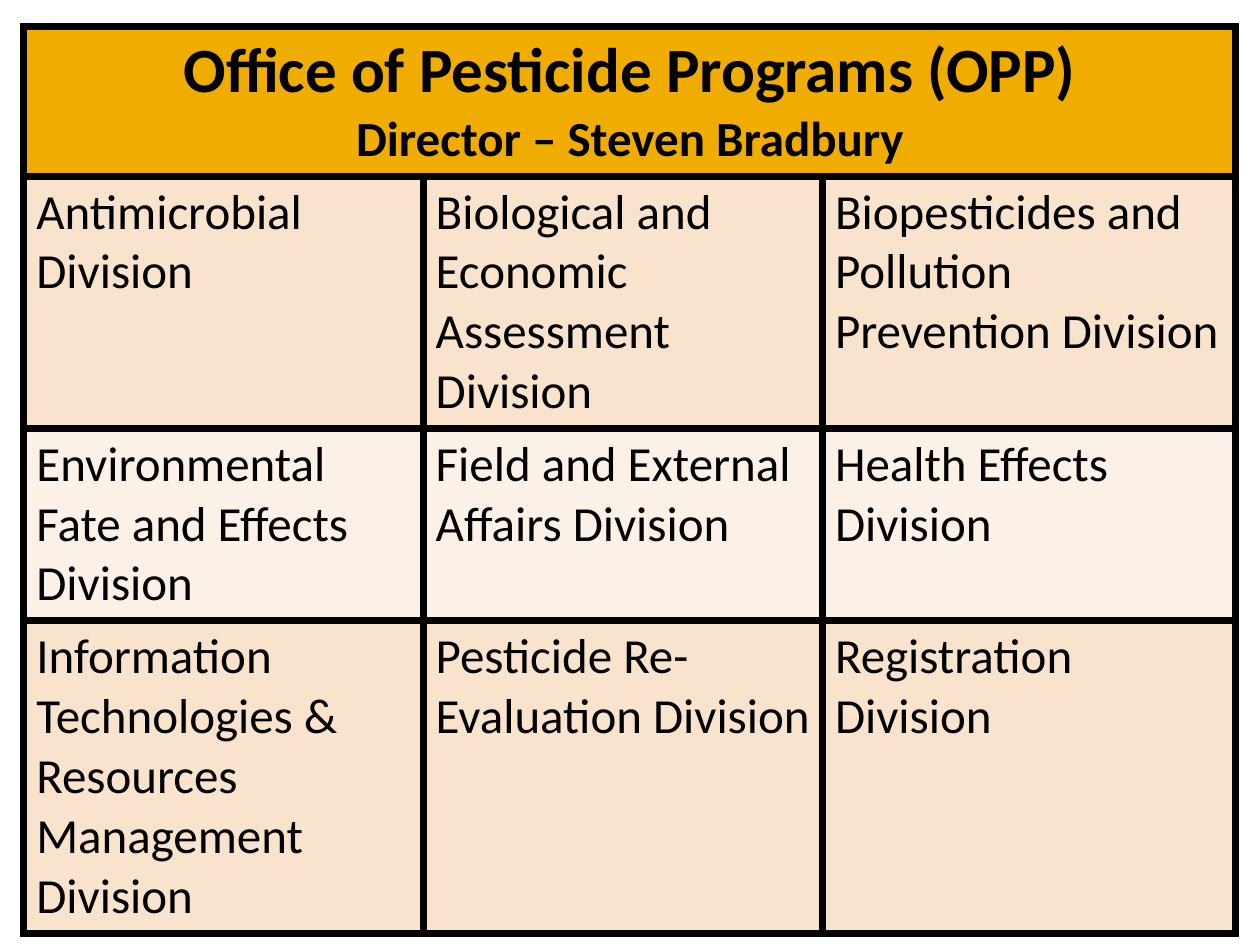
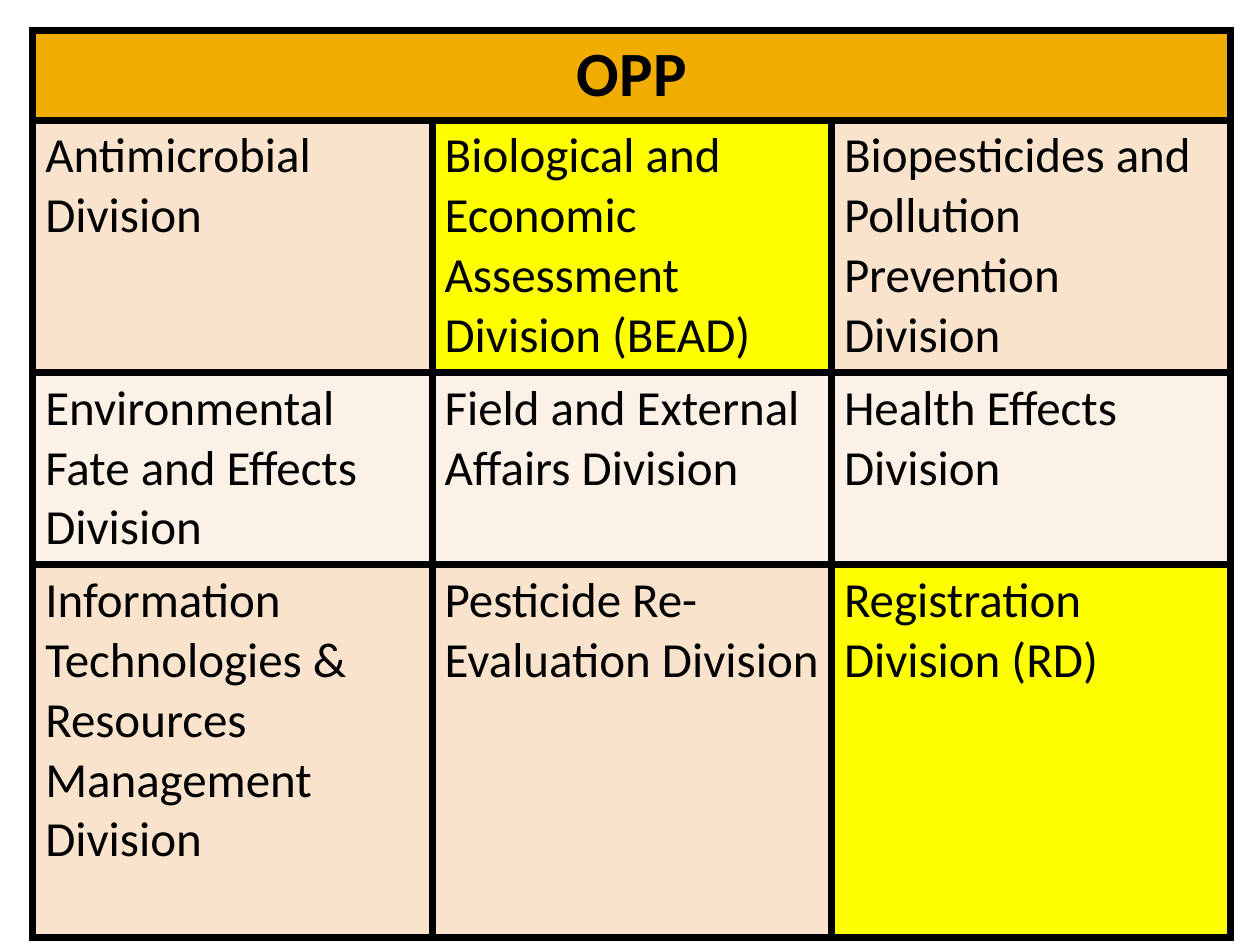
from dataclasses import dataclass, field

from lxml import etree
from pptx import Presentation
from pptx.dml.color import RGBColor
from pptx.enum import text
from pptx.oxml import ns
from pptx.util import Cm, Pt

# Shared look
FONT = "Calibri"
BLACK = RGBColor(0x00, 0x00, 0x00)
GOLD = RGBColor(0xF0, 0xAD, 0x00)
PEACH = RGBColor(0xF9, 0xE3, 0xCC)
CREAM = RGBColor(0xFC, 0xF1, 0xE7)
YELLOW = RGBColor(0xFF, 0xFF, 0x00)
HEADING_SIZE, BODY_SIZE, BORDER = Pt(36), Pt(28), Pt(4.5)

DIVISIONS = [
    ["Antimicrobial", "Biological and Economic Assessment",
     "Biopesticides and Pollution Prevention"],
    ["Environmental Fate and Effects", "Field and External Affairs", "Health Effects"],
    ["Information Technologies & Resources Management", "Pesticide Re-Evaluation",
     "Registration"],
]


@dataclass
class OfficeChart:
    """Lengths in centimetres; highlights map a division to its abbreviation."""
    left: float
    top: float
    columns: list[float]
    rows: list[float]
    heading: list[str]
    highlights: dict[str, str] = field(default_factory=dict)


CHARTS = [
    OfficeChart(0.48, 0.53, [8.05, 8.05, 8.33], [3.02, 5.06, 3.88, 6.3],
                ["Office of Pesticide Programs (OPP)", "Director – Steven Bradbury"]),
    OfficeChart(0.66, 0.61, [8.05] * 3, [1.81, 5.08, 3.87, 7.52], ["OPP"],
                {"Biological and Economic Assessment": "BEAD", "Registration": "RD"}),
]


def add_borders(cell) -> None:
    tc_pr = cell._tc.get_or_add_tcPr()
    for side in ("lnL", "lnR", "lnT", "lnB"):
        ln = etree.SubElement(tc_pr, ns.qn(f"a:{side}"), w=str(BORDER))
        fill = etree.SubElement(ln, ns.qn("a:solidFill"))
        etree.SubElement(fill, ns.qn("a:srgbClr"), val=str(BLACK))


def fill_cell(cell, color: RGBColor) -> None:
    # Borders precede the fill in the cell properties
    add_borders(cell)
    cell.fill.solid()
    cell.fill.fore_color.rgb = color


def format_paragraph(p, size: Pt, bold: bool = False) -> None:
    p.font.name = FONT
    p.font.size = size
    p.font.bold = bold
    p.font.color.rgb = BLACK


def add_heading(table, lines: list[str]) -> None:
    for cell in table.rows[0].cells:
        fill_cell(cell, GOLD)
    heading = table.cell(0, 0)
    heading.merge(table.cell(0, len(table.columns) - 1))
    tf = heading.text_frame
    tf.text = "\n".join(lines)
    for i, p in enumerate(tf.paragraphs):
        p.alignment = text.PP_ALIGN.CENTER
        format_paragraph(p, BODY_SIZE if i else HEADING_SIZE, bold=True)


def add_division(cell, name: str, band: RGBColor, highlights: dict[str, str]) -> None:
    short = highlights.get(name)
    fill_cell(cell, YELLOW if short else band)
    cell.text = f"{name} Division" + (f" ({short})" if short else "")
    format_paragraph(cell.text_frame.paragraphs[0], BODY_SIZE)


def add_office_chart(slide, chart: OfficeChart) -> None:
    table = slide.shapes.add_table(
        len(chart.rows), len(chart.columns), Cm(chart.left), Cm(chart.top),
        Cm(sum(chart.columns)), Cm(sum(chart.rows))).table
    table.first_row = table.horz_banding = False
    for column, width in zip(table.columns, chart.columns):
        column.width = Cm(width)
    for row, height in zip(table.rows, chart.rows):
        row.height = Cm(height)

    add_heading(table, chart.heading)
    for r, names in enumerate(DIVISIONS, start=1):
        band = PEACH if r % 2 else CREAM
        for c, name in enumerate(names):
            add_division(table.cell(r, c), name, band, chart.highlights)


def main() -> None:
    prs = Presentation()
    prs.slide_width, prs.slide_height = Cm(25.4), Cm(19.05)
    blank = prs.slide_layouts[6]
    for chart in CHARTS:
        add_office_chart(prs.slides.add_slide(blank), chart)
    prs.save("out.pptx")


if __name__ == "__main__":
    main()
